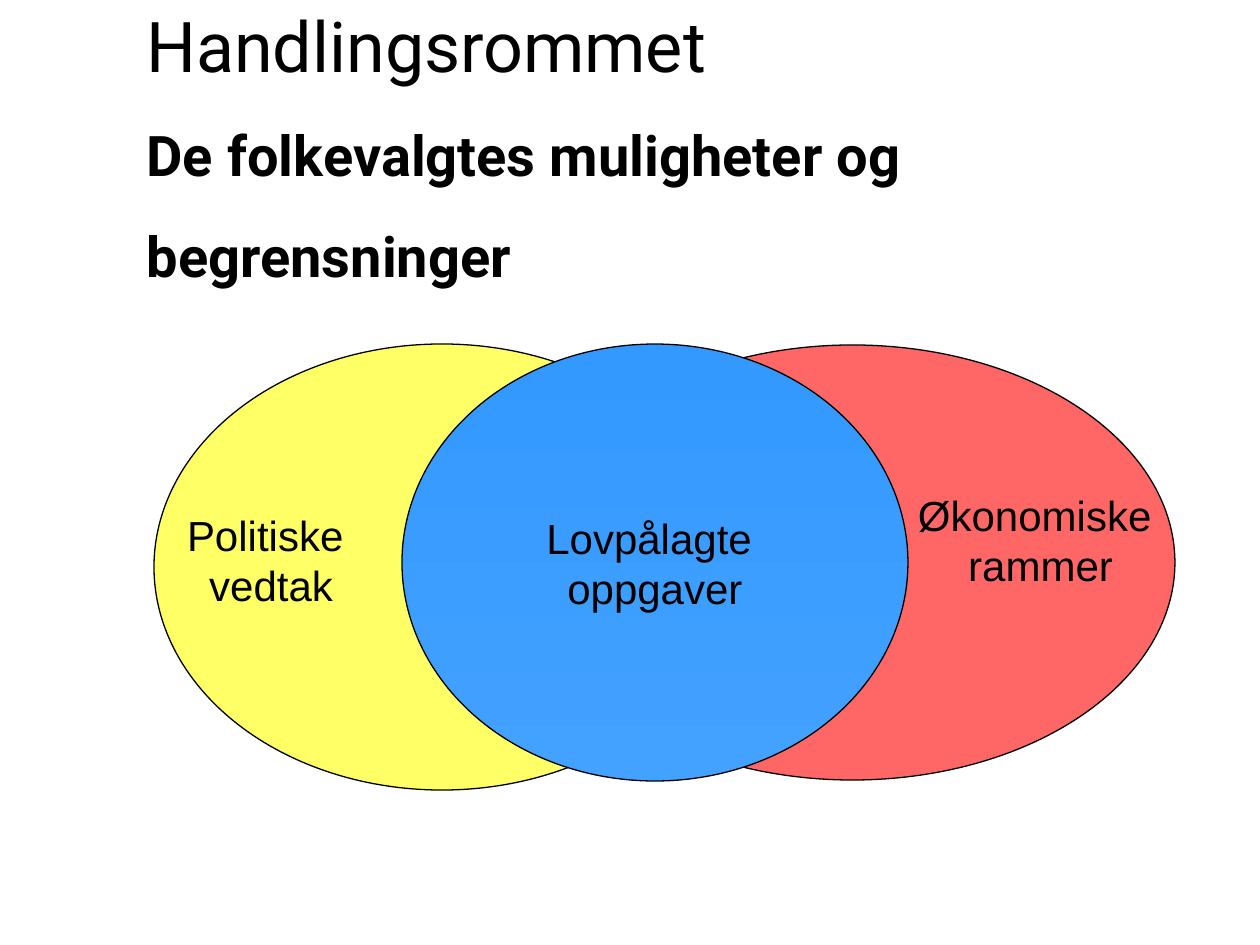
import copy

import pptx
import pptx.dml.color
import pptx.enum.shapes
import pptx.enum.text
import pptx.oxml.ns
import pptx.util
from lxml import etree

BLACK = pptx.dml.color.RGBColor(0x00, 0x00, 0x00)
YELLOW = pptx.dml.color.RGBColor(0xFF, 0xFF, 0x00)
RED = pptx.dml.color.RGBColor(0xFF, 0x00, 0x00)
BLUE = pptx.dml.color.RGBColor(0x33, 0x99, 0xFF)
LIGHT_BLUE = pptx.dml.color.RGBColor(0x43, 0xA1, 0xFF)
SCALE = 914400 / 126
OPACITY = 60
ALIGN = pptx.enum.text.PP_ALIGN
ANCHOR = pptx.enum.text.MSO_ANCHOR
AUTO_SIZE = pptx.enum.text.MSO_AUTO_SIZE


def px(*lengths):
    return [pptx.util.Emu(round(length * SCALE)) for length in lengths]


def write_label(shape, lines, frame_format):
    for name, value in frame_format.items():
        setattr(shape.text_frame, name, value)
    shape.text_frame.text = "\n".join(lines)
    label_format = {"name": "Arial", "size": pptx.util.Pt(24)}
    for paragraph in shape.text_frame.paragraphs:
        paragraph.alignment = ALIGN.CENTER
        paragraph.font.color.rgb = BLACK
        for run in paragraph.runs:
            run.font.color.rgb = BLACK
            for name, value in label_format.items():
                setattr(run.font, name, value)


presentation = pptx.Presentation()
presentation.slide_width, presentation.slide_height = px(1260, 945)
slide = presentation.slides.add_slide(presentation.slide_layouts[5])

title = slide.shapes.title
title.left, title.top, title.width, title.height = px(134, 45, 1101, 159)
title_format = {"word_wrap": True, "auto_size": AUTO_SIZE.NONE, "vertical_anchor": ANCHOR.MIDDLE}
for name, value in title_format.items():
    setattr(title.text_frame, name, value)
heading = title.text_frame.paragraphs[0]
heading.alignment = ALIGN.LEFT
heading.line_spacing = 1.5
heading.text = "Handlingsrommet\vDe folkevalgtes muligheter og begrensninger"
for run, size, bold in zip(heading.runs, (40, 32), (False, True)):
    run_format = {"name": "Roboto", "size": pptx.util.Pt(size), "bold": bold}
    for name, value in run_format.items():
        setattr(run.font, name, value)
    run.font.color.rgb = BLACK
line_break = heading._p.find(pptx.oxml.ns.qn("a:br"))
line_break.append(copy.deepcopy(heading.runs[0]._r.rPr))

ellipses = {}
for topic, box, color in (
    ("politics", (154, 344, 576, 446), YELLOW),
    ("economy", (530, 345, 645, 435), RED),
    ("law", (402, 344, 506, 437), None),
):
    ellipse = slide.shapes.add_shape(pptx.enum.shapes.MSO_SHAPE.OVAL, *px(*box))
    ellipse.shadow.inherit = False
    ellipse.line.color.rgb = BLACK
    ellipse.line.width = pptx.util.Pt(0.75)
    if color is None:
        ellipse.fill.gradient()
        ellipse.fill.gradient_angle = 270
        for stop, position, stop_color in zip(ellipse.fill.gradient_stops, (0, 1), (BLUE, LIGHT_BLUE)):
            stop.position = position
            stop.color.rgb = stop_color
    else:
        ellipse.fill.solid()
        ellipse.fill.fore_color.rgb = color
        fill_color = ellipse._element.spPr.find(".//" + pptx.oxml.ns.qn("a:srgbClr"))
        etree.SubElement(fill_color, pptx.oxml.ns.qn("a:alpha"), val=str(OPACITY * 1000))
    ellipses[topic] = ellipse

write_label(
    ellipses["law"],
    ("Lovpålagte ", "oppgaver"),
    {"word_wrap": False, "vertical_anchor": ANCHOR.MIDDLE},
)
for box, lines in (
    ((905, 483, 271, 113), ("Økonomiske ", "rammer")),
    ((174, 503, 194, 113), ("Politiske ", "vedtak")),
):
    label = slide.shapes.add_textbox(*px(*box))
    write_label(label, lines, {"word_wrap": False, "auto_size": AUTO_SIZE.SHAPE_TO_FIT_TEXT})

presentation.save("out.pptx")
